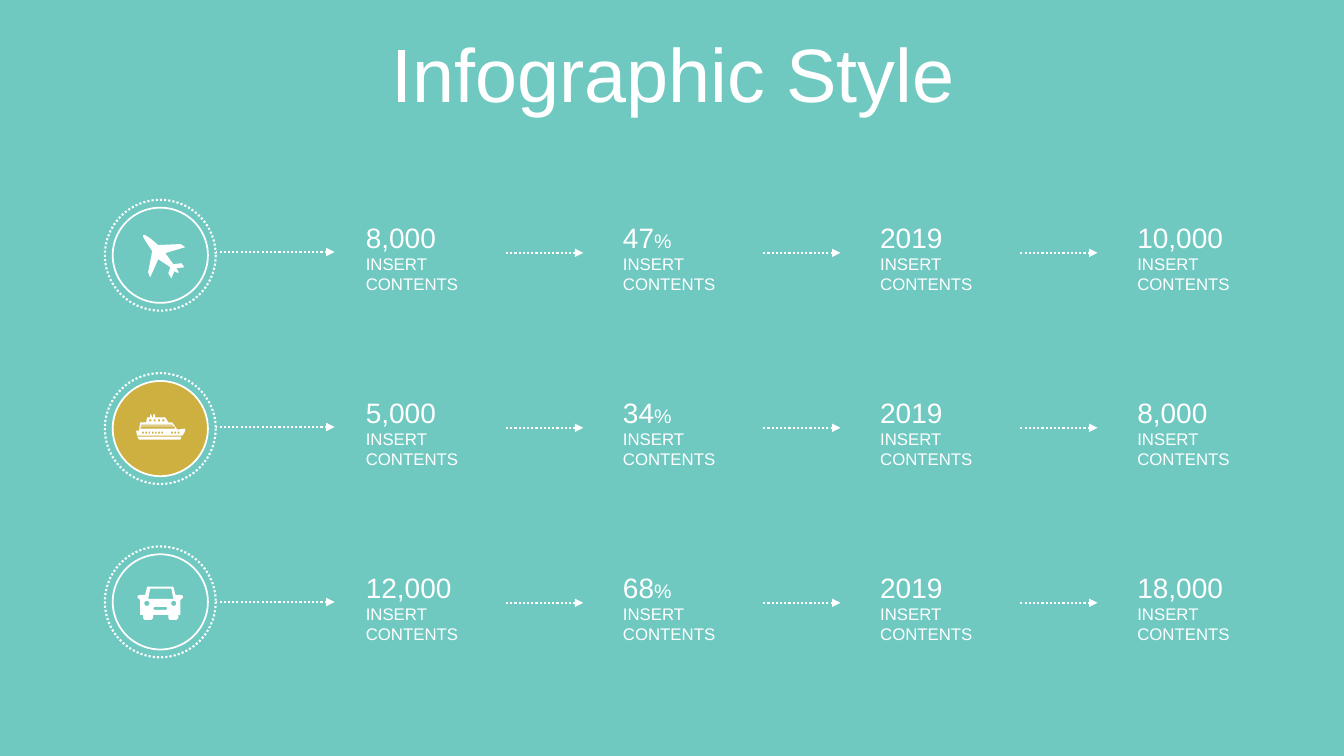
from math import cos, pi, sin

from lxml.etree import SubElement
from pptx import Presentation
from pptx.dml.color import RGBColor
from pptx.enum.dml import MSO_LINE
from pptx.enum.shapes import MSO_CONNECTOR, MSO_SHAPE
from pptx.enum.text import MSO_ANCHOR, PP_ALIGN
from pptx.oxml.ns import qn
from pptx.util import Pt

COLORS = {"teal": "6FC9C1", "gold": "F7A60B", "white": "FFFFFF"}
FONT = "Arial"
ICON_UNIT = 0.72
ICON_X = 114.5
ICON_TOP, ICON_PITCH = 182.3, 123.8
ROW_TOP, ROW_PITCH = 180, 125
COLUMN_LEFT, COLUMN_PITCH = 254.2, 183.7


def rectangle(left, top, width, height):
    """Return the corners of a rectangle."""
    right, bottom = left + width, top + height
    return [(left, top), (left, bottom), (right, bottom), (right, top)]


def ring(x, y, radius, steps=16):
    """Return points evenly spread around a circle."""
    angles = [2 * pi * step / steps for step in range(steps)]
    return [(x + radius * cos(angle), y + radius * sin(angle)) for angle in angles]


PLANE = [[
    (24, 12), (16, 13), (18, 16), (18, 18), (14, 16), (11, 23), (8, 18), (10, 12),
    (-2, 4), (-10, 22), (-12, 17), (-8, -4), (-14, -13), (-17, -18), (-17, -20),
    (-15, -20), (-9, -16), (-2, -10), (20, -11), (25, -8), (5, -2), (13, 9), (21, 8),
]]

SHIP = [
    [(-7, -14), (-5, -14), (-5, -11), (5, -11), (8, -6), (12, -6), (17, 1), (25, 0),
     (24, 4), (22, 7), (-23, 7), (-24, 2), (-21, 2), (-20, -6), (-14, -6), (-13, -11),
     (-10, -11), (-10, -14), (-9, -14), (-8, -11), (-7, -11)],
    [(-23, 8), (21, 8), (20, 11), (-21, 11)],
    [(-19, -2), (-20, 0), (15, 0), (14, -2)],
    [(-19, -4), (-19, -3), (13, -3), (12, -4)],
    *[rectangle(-18 + 3.2 * index, 3, 1.7, 2) for index in (*range(7), 9, 10, 11)],
    *[rectangle(-11 + 4.3 * index, -9, 2.2, 2) for index in range(4)],
]

CAR = [
    [(-13, -15), (13, -15), (15, -7), (20, -7), (22.5, -6), (22.5, -4), (20, -2),
     (20, 13), (18, 13), (18, 16), (16, 18), (9, 18), (8, 16), (8, 13), (-7, 13),
     (-7, 16), (-9, 18), (-16, 18), (-17, 16), (-17, 13), (-20, 13), (-20, -2),
     (-22.5, -4), (-22.5, -6), (-20, -7), (-15, -7)],
    [(-10, -13), (-12, -3), (13, -3), (11, -13)],
    [(-6, 5), (-7, 6.5), (-6, 8), (6, 8), (7, 6.5), (6, 5)],
    ring(-13.3, 1.5, 2.6),
    ring(13.3, 1.5, 2.6),
]

ROWS = [
    (PLANE, "teal", 70, ["8,000", "47%", "2019", "10,000"]),
    (SHIP, "gold", 70, ["5,000", "34%", "2019", "8,000"]),
    (CAR, "teal", 60, ["12,000", "68%", "2019", "18,000"]),
]


def color(name):
    """Return a named colour."""
    return RGBColor.from_string(COLORS[name])


def add_text(slide, text, left, top, width, height, size=12,
             anchor=MSO_ANCHOR.TOP, align=PP_ALIGN.LEFT, spacing=None, before=0):
    """Add white text, with one paragraph a line and smaller percent signs."""
    frame = slide.shapes.add_textbox(Pt(left), Pt(top), Pt(width), Pt(height)).text_frame
    frame.word_wrap = True
    frame.vertical_anchor = anchor
    for index, line in enumerate(text.split("\n")):
        paragraph = frame.paragraphs[0] if index == 0 else frame.add_paragraph()
        paragraph.alignment = align
        paragraph.line_spacing = spacing
        paragraph.space_before = Pt(before)
        number, percent, _ = line.partition("%")
        for part, part_size in ((number, size), (percent, 14)):
            if part:
                run = paragraph.add_run()
                run.text = part
                run.font.name = FONT
                run.font.size = Pt(part_size)
                run.font.color.rgb = color("white")


def add_circle(slide, y, diameter, line_width, fill=None, opacity=100, dash=None):
    """Add a white-edged circle centred in the icon column."""
    shape = slide.shapes.add_shape(
        MSO_SHAPE.OVAL, Pt(ICON_X - diameter / 2), Pt(y - diameter / 2),
        Pt(diameter), Pt(diameter))
    shape.rotation = 180
    shape.shadow.inherit = False
    shape.line.color.rgb = color("white")
    shape.line.width = Pt(line_width)
    shape.line.dash_style = dash
    if fill is None:
        shape.fill.background()
        return
    shape.fill.solid()
    shape.fill.fore_color.rgb = color(fill)
    fill_color = shape.fill._xPr.find(qn("a:solidFill"))[0]
    SubElement(fill_color, qn("a:alpha")).set("val", str(opacity * 1000))


def add_icon(slide, y, contours):
    """Add a white outline icon centred in the icon column."""
    detail = 10
    scaled = [[(x * detail, y * detail) for x, y in contour] for contour in contours]
    builder = slide.shapes.build_freeform(*scaled[0][0], scale=Pt(ICON_UNIT / detail))
    for index, contour in enumerate(scaled):
        if index:
            builder.move_to(*contour[0])
        builder.add_line_segments(contour[1:], close=True)
    shape = builder.convert_to_shape(Pt(ICON_X), Pt(y))
    shape.shadow.inherit = False
    shape.fill.solid()
    shape.fill.fore_color.rgb = color("white")
    shape.line.fill.background()


def add_arrow(slide, left, right, y):
    """Add a dotted arrow pointing right."""
    arrow = slide.shapes.add_connector(
        MSO_CONNECTOR.STRAIGHT, Pt(right), Pt(y), Pt(left), Pt(y))
    arrow.line.color.rgb = color("white")
    arrow.line.width = Pt(1.5)
    arrow.line.dash_style = MSO_LINE.ROUND_DOT
    SubElement(arrow.line._get_or_add_ln(), qn("a:headEnd")).set("type", "triangle")
    SubElement(arrow._element.spPr, qn("a:effectLst"))


def add_row(slide, row, icon, fill, opacity, values):
    """Add one transport row: its badge, arrows and figures."""
    badge_y = ICON_TOP + ICON_PITCH * row
    y = ROW_TOP + ROW_PITCH * row
    add_circle(slide, badge_y, 68, 1.25, fill=fill, opacity=opacity)
    add_circle(slide, badge_y, 79.2, 1.5, dash=MSO_LINE.ROUND_DOT)
    add_icon(slide, badge_y, icon)
    add_arrow(slide, 154.2, 239, y)
    for column, value in enumerate(values):
        left = COLUMN_LEFT + COLUMN_PITCH * column
        add_text(slide, "INSERT\nCONTENTS", left, y - 2.4, 84.4, 36)
        add_text(slide, value, left, y - 26.6, 84.4, 31.7, size=20,
                 anchor=MSO_ANCHOR.BOTTOM)
        if column < len(values) - 1:
            add_arrow(slide, left + 105.8, left + 162.4, y + 0.6)


def main():
    """Build and save the slide."""
    presentation = Presentation()
    presentation.slide_width, presentation.slide_height = Pt(960), Pt(540)
    slide = presentation.slides.add_slide(presentation.slide_layouts[6])
    slide.background.fill.solid()
    slide.background.fill.fore_color.rgb = color("teal")
    add_text(slide, "Infographic Style", 25.2, 22.3, 911.5, 66.2, size=54,
             anchor=MSO_ANCHOR.MIDDLE, align=PP_ALIGN.CENTER, spacing=0.9, before=10)
    for row, details in enumerate(ROWS):
        add_row(slide, row, *details)
    presentation.save("out.pptx")


if __name__ == "__main__":
    main()
